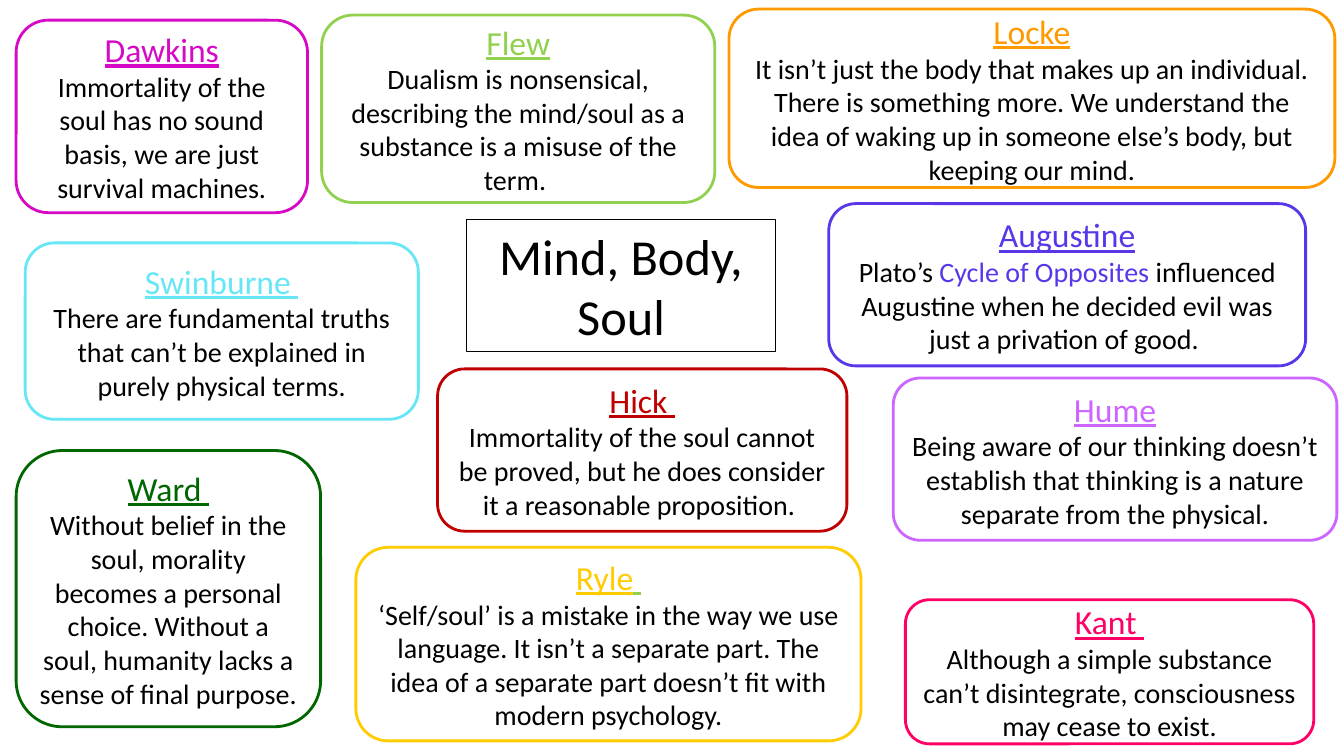
from pptx import Presentation
from pptx.dml.color import RGBColor
from pptx.enum.shapes import MSO_SHAPE
from pptx.enum.text import MSO_ANCHOR, MSO_AUTO_SIZE, PP_ALIGN
from pptx.util import Inches, Pt

ROUNDED = MSO_SHAPE.ROUNDED_RECTANGLE
CENTER = PP_ALIGN.CENTER
TOP, MIDDLE = MSO_ANCHOR.TOP, MSO_ANCHOR.MIDDLE
NO_AUTOFIT = MSO_AUTO_SIZE.NONE

BLACK = RGBColor(0x00, 0x00, 0x00)
ORANGE = RGBColor(0xFF, 0x99, 0x00)
MAGENTA = RGBColor(0xD5, 0x09, 0xC6)
CYAN = RGBColor(0x67, 0xE7, 0xF5)
INDIGO = RGBColor(0x59, 0x37, 0xE9)
PINK = RGBColor(0xFF, 0x00, 0x66)
YELLOW = RGBColor(0xFF, 0xCC, 0x00)
RED = RGBColor(0xC0, 0x00, 0x00)
VIOLET = RGBColor(0xCC, 0x66, 0xFF)
LIME = RGBColor(0x92, 0xD0, 0x50)
GREEN = RGBColor(0x00, 0x66, 0x00)

# Content
TOPIC = "Mind, Body, Soul"
TOPIC_BOX = (4.63, 2.18, 3.06, 1.31)

# (left, top, width, height), colour, name runs, view runs; a run is (text, colour)
THINKERS = [
    ((7.23, 0.09, 6.01, 1.77), ORANGE, [("Locke", ORANGE)],
     [("It isn’t just the body that makes up an individual. There is something more. "
       "We understand the idea of waking up in someone else’s body, but keeping our mind.", BLACK)]),
    ((0.16, 0.2, 2.89, 1.91), MAGENTA, [("Dawkins", MAGENTA)],
     [("Immortality of the soul has no sound basis, we are just survival machines.", BLACK)]),
    ((0.25, 2.41, 3.9, 1.75), CYAN, [("Swinburne ", CYAN)],
     [("There are fundamental truths that can’t be explained in purely physical terms.", BLACK)]),
    ((8.22, 2.02, 4.73, 1.61), INDIGO, [("Augustine", INDIGO)],
     [("Plato’s ", BLACK), ("Cycle of Opposites ", INDIGO),
      ("influenced Augustine when he decided evil was just a privation of good. ", BLACK)]),
    ((8.98, 5.95, 4.05, 1.43), PINK, [("Kant ", PINK)],
     [("Although a simple substance can’t disintegrate, consciousness may cease to exist.", BLACK)]),
    ((3.53, 5.43, 5.01, 1.92), YELLOW, [("Ryle", YELLOW), (" ", LIME)],
     [("‘Self/soul’ is a mistake in the way we use language. It isn’t a separate part. "
       "The idea of a separate part doesn’t fit with modern psychology.", BLACK)]),
    ((4.34, 3.66, 4.06, 1.61), RED, [("Hick ", RED)],
     [("Immortality of the soul cannot be proved, but he does consider "
       "it a reasonable proposition. ", BLACK)]),
    ((8.86, 3.75, 4.4, 1.61), VIOLET, [("Hume", VIOLET)],
     [("Being aware of our thinking doesn’t establish that thinking is a nature "
       "separate from the physical.", BLACK)]),
    ((3.19, 0.15, 3.9, 1.86), LIME, [("Flew", LIME)],
     [("Dualism is nonsensical, describing the mind/soul as a substance "
       "is a misuse of the term. ", BLACK)]),
    ((0.16, 4.47, 3.02, 2.74), GREEN, [("Ward ", GREEN)],
     [("Without belief in the soul, morality becomes a personal choice. "
       "Without a soul, humanity lacks a sense of final purpose.", BLACK)]),
]

# Formats
TOPIC_FONT = {"name": "Calibri", "size": Pt(36), "underline": False}
NAME_FONT = {"name": "Calibri", "size": Pt(24), "underline": True}
VIEW_FONT = {"name": "Calibri", "size": Pt(20), "underline": False}
TOPIC_FRAME = {"word_wrap": True, "auto_size": NO_AUTOFIT, "vertical_anchor": TOP}
CARD_FRAME = {"word_wrap": True, "vertical_anchor": MIDDLE}


def apply(target, values):
    for key, value in values.items():
        setattr(target, key, value)


def outline(box, colour, width):
    box.fill.background()
    box.line.color.rgb = colour
    box.line.width = Pt(width)


def write(paragraph, runs, font):
    paragraph.alignment = CENTER
    for text, colour in runs:
        run = paragraph.add_run()
        run.text = text
        apply(run.font, font)
        run.font.color.rgb = colour


prs = Presentation()
prs.slide_width, prs.slide_height = Inches(13.33), Inches(7.5)
slide = prs.slides.add_slide(prs.slide_layouts[5])

# Central topic
topic = slide.shapes.title
apply(topic, dict(zip(("left", "top", "width", "height"), map(Inches, TOPIC_BOX))))
outline(topic, BLACK, 0.75)
apply(topic.text_frame, TOPIC_FRAME)
write(topic.text_frame.paragraphs[0], [(TOPIC, BLACK)], TOPIC_FONT)

# One card per thinker
for place, colour, name, view in THINKERS:
    card = slide.shapes.add_shape(ROUNDED, *map(Inches, place))
    card.shadow.inherit = False
    outline(card, colour, 2)
    apply(card.text_frame, CARD_FRAME)
    write(card.text_frame.paragraphs[0], name, NAME_FONT)
    write(card.text_frame.add_paragraph(), view, VIEW_FONT)

prs.save("out.pptx")
